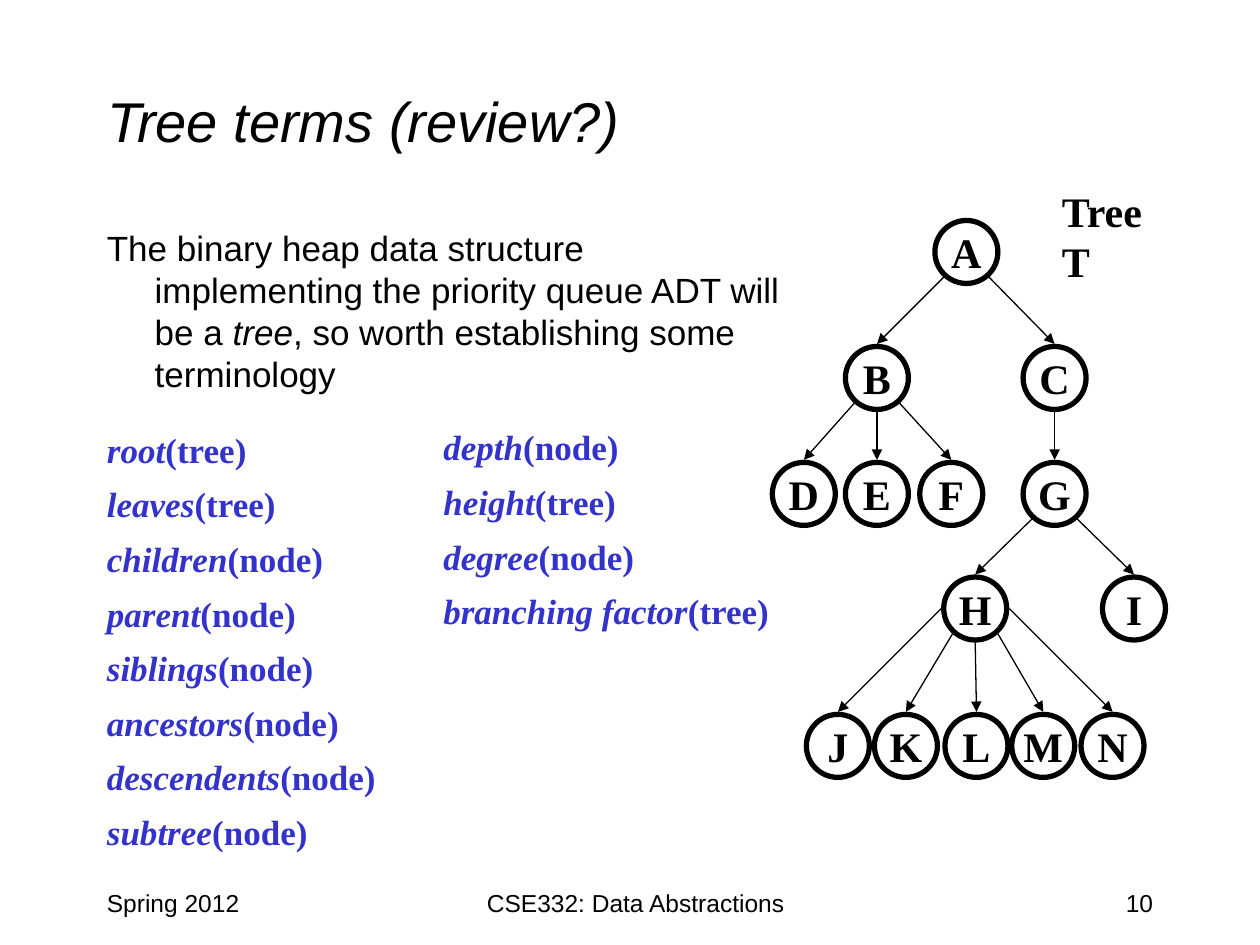
import dataclasses

import pptx
import pptx.dml.color
import pptx.enum.shapes
import pptx.enum.text
import pptx.oxml
import pptx.oxml.ns
import pptx.util

Inches = pptx.util.Inches
Pt = pptx.util.Pt
Align = pptx.enum.text.PP_ALIGN
Anchor = pptx.enum.text.MSO_ANCHOR


@dataclasses.dataclass(frozen=True)
class Theme:
    sans: str = "Arial"
    serif: str = "Times New Roman"
    black: pptx.dml.color.RGBColor = pptx.dml.color.RGBColor(0, 0, 0)
    term: pptx.dml.color.RGBColor = pptx.dml.color.RGBColor(0x33, 0x33, 0xCC)
    title_size: int = 32
    body_size: int = 20
    node_size: int = 24
    footer_size: int = 14
    node_line: float = 3
    edge_line: float = 0.75


THEME = Theme()

# Node centres, measured from the tree's top left corner
ROWS = [
    (0.25, {"A": 1.54}),
    (1.25, {"B": 0.83, "C": 2.24}),
    (2.17, {"D": 0.25, "E": 0.83, "F": 1.42, "G": 2.24}),
    (3.08, {"H": 1.61, "I": 2.87}),
    (4.17, {"J": 0.52, "K": 1.06, "L": 1.62, "M": 2.15, "N": 2.7}),
]
# Children of each node, with the side of the parent their edge leaves from
CHILDREN = {
    "A": {"B": "southwest", "C": "southeast"},
    "B": {"D": "southwest", "E": "south", "F": "southeast"},
    "C": {"G": "south"},
    "G": {"H": "southwest", "I": "southeast"},
    "H": {"J": "west", "K": "southwest", "L": "south",
          "M": "southeast", "N": "east"},
}
EXITS = {
    "west": (-0.27, 0), "southwest": (-0.18, 0.2), "south": (0, 0.27),
    "southeast": (0.18, 0.2), "east": (0.27, 0),
}
RADIUS = 0.25
EDGE_GAP = 0.02

TREE_TERMS = [
    ("root", "(tree)"), ("leaves", "(tree)"), ("children", "(node)"),
    ("parent", "(node)"), ("siblings", "(node)"), ("ancestors", "(node)"),
    ("descendents", "(node)"), ("subtree", "(node)"),
]
MEASURE_TERMS = [
    ("depth", "(node)"), ("height", "(tree)"), ("degree", "(node)"),
    ("branching factor", "(tree)"),
]


def style(paragraph, name, size, color=THEME.black, bold=False):
    font = paragraph.font
    font.name, font.size, font.bold = name, Pt(size), bold
    font.color.rgb = color


def add_text_frame(slide, left, top, width, height):
    box = slide.shapes.add_textbox(
        Inches(left), Inches(top), Inches(width), Inches(height))
    box.text_frame.word_wrap = True
    return box.text_frame


def add_runs(paragraph, parts):
    for text, italic in parts:
        run = paragraph.add_run()
        run.text = text
        run.font.italic = italic


def add_title(slide, left, top, width, height):
    title = slide.shapes.title
    title.left, title.top = Inches(left), Inches(top)
    title.width, title.height = Inches(width), Inches(height)
    frame = title.text_frame
    frame.text = "Tree terms (review?)"
    frame.vertical_anchor = Anchor.MIDDLE
    frame.auto_size = pptx.enum.text.MSO_AUTO_SIZE.NONE
    paragraph = frame.paragraphs[0]
    paragraph.alignment = Align.LEFT
    style(paragraph, THEME.sans, THEME.title_size)
    paragraph.font.italic = True


def add_introduction(slide, left, top, width, height):
    paragraph = add_text_frame(slide, left, top, width, height).paragraphs[0]
    add_runs(paragraph, [
        ("The binary heap data structure implementing the priority queue "
         "ADT will be a ", False),
        ("tree", True),
        (", so worth establishing some terminology", False),
    ])
    # Hanging indent
    properties = paragraph._p.get_or_add_pPr()
    properties.set("marL", str(Inches(0.38)))
    properties.set("indent", str(-Inches(0.38)))
    style(paragraph, THEME.sans, THEME.body_size)


def add_terms(slide, terms, left, top, width, height):
    frame = add_text_frame(slide, left, top, width, height)
    for index, (term, argument) in enumerate(terms):
        paragraph = frame.add_paragraph() if index else frame.paragraphs[0]
        paragraph.line_spacing = 1.3
        style(paragraph, THEME.serif, THEME.body_size, THEME.term, bold=True)
        add_runs(paragraph, [(term, True), (argument, False)])


def add_node(shapes, label, x, y):
    node = shapes.add_shape(
        pptx.enum.shapes.MSO_SHAPE.OVAL, Inches(x - RADIUS),
        Inches(y - RADIUS), Inches(2 * RADIUS), Inches(2 * RADIUS))
    node.shadow.inherit = False
    node.fill.background()
    node.line.color.rgb = THEME.black
    node.line.width = Pt(THEME.node_line)
    frame = node.text_frame
    frame.text = label
    frame.word_wrap = False
    frame.vertical_anchor = Anchor.MIDDLE
    frame.paragraphs[0].alignment = Align.CENTER
    style(frame.paragraphs[0], THEME.serif, THEME.node_size, bold=True)


def add_edge(shapes, start, end):
    edge = shapes.add_connector(
        pptx.enum.shapes.MSO_CONNECTOR.STRAIGHT,
        *(Inches(value) for value in (*start, *end)))
    edge.line.color.rgb = THEME.black
    edge.line.width = Pt(THEME.edge_line)
    # Arrowhead at the child, and no shadow
    arrow = pptx.oxml.parse_xml(
        f'<a:tailEnd {pptx.oxml.ns.nsdecls("a")} type="triangle"/>')
    edge.line._get_or_add_ln().append(arrow)
    edge._element.spPr.append(pptx.oxml.parse_xml(
        f'<a:effectLst {pptx.oxml.ns.nsdecls("a")}/>'))


def add_tree(slide, left, top):
    shapes = slide.shapes.add_group_shape().shapes
    centres = {label: (left + x, top + y)
               for y, row in ROWS for label, x in row.items()}
    for label, (x, y) in centres.items():
        add_node(shapes, label, x, y)
    for parent, children in CHILDREN.items():
        parent_x, parent_y = centres[parent]
        for child, side in children.items():
            dx, dy = EXITS[side]
            child_x, child_y = centres[child]
            add_edge(shapes, (parent_x + dx, parent_y + dy),
                     (child_x, child_y - RADIUS - EDGE_GAP))


def add_label(slide, text, name, size, box, bold=False, alignment=Align.LEFT):
    frame = add_text_frame(slide, *box)
    frame.text = text
    frame.paragraphs[0].alignment = alignment
    style(frame.paragraphs[0], name, size, bold=bold)


def add_footer(slide, top, height):
    for text, left, width, alignment in [
        ("Spring 2012", 0.75, 2.08, Align.LEFT),
        ("CSE332: Data Abstractions", 3.17, 3.75, Align.CENTER),
        ("10", 7.17, 2.08, Align.RIGHT),
    ]:
        add_label(slide, text, THEME.sans, THEME.footer_size,
                  (left, top, width, height), alignment=alignment)


def main():
    presentation = pptx.Presentation()
    presentation.slide_width = Inches(10)
    presentation.slide_height = Inches(7.5)
    slide = presentation.slides.add_slide(presentation.slide_layouts[5])
    add_title(slide, 0.75, 0.33, 8.5, 1.25)
    add_introduction(slide, 0.75, 1.75, 5.67, 1.45)
    add_footer(slide, 7, 0.5)
    add_tree(slide, 6.13, 1.75)
    add_label(slide, "Tree T", THEME.serif, THEME.node_size,
              (8.33, 1.42, 1.12, 0.5), bold=True)
    add_terms(slide, TREE_TERMS, 0.75, 3.25, 2.42, 3.6)
    add_terms(slide, MEASURE_TERMS, 3.42, 3.23, 3.17, 1.85)
    presentation.save("out.pptx")


if __name__ == "__main__":
    main()
